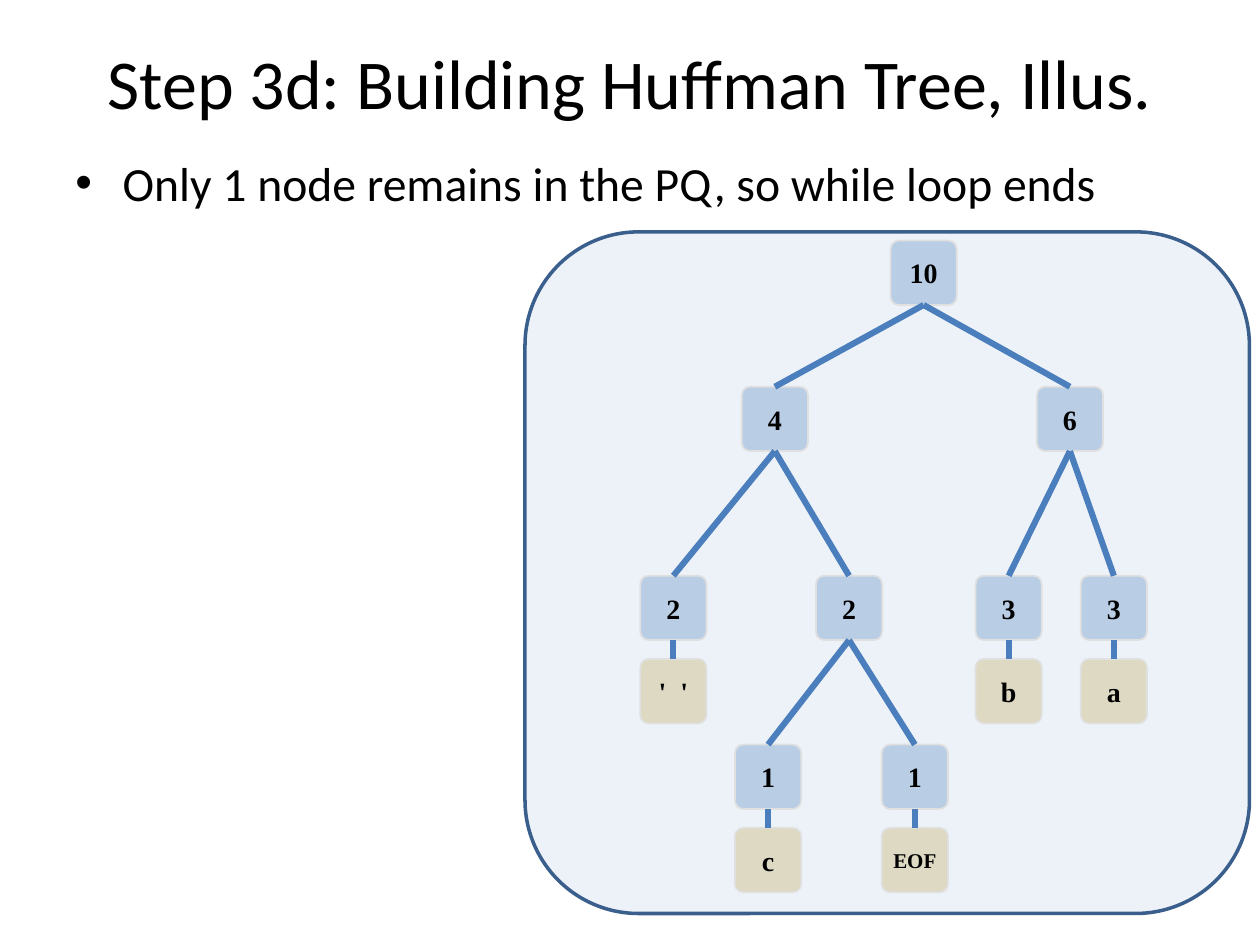
from pptx import Presentation
from pptx.dml.color import RGBColor
from pptx.enum.shapes import MSO_CONNECTOR as Link, MSO_SHAPE as Shape
from pptx.enum.text import MSO_ANCHOR as Anchor, MSO_AUTO_SIZE as Auto, PP_ALIGN as Align
from pptx.oxml.ns import qn
from pptx.util import Pt
from lxml.etree import SubElement as Sub


def tint(col, code):
    col.rgb = RGBColor.from_string(code)


def style(frame, text, font, look, code, align):
    for key, val in look.items():
        setattr(frame, key, val)
    para = frame.paragraphs[0]
    para.alignment = align
    run = para.add_run()
    run.text = text
    for key, val in font.items():
        setattr(run.font, key, val)
    tint(run.font.color, code)
    return para


deck = Presentation()
deck.slide_width, deck.slide_height = Pt(720), Pt(540)
slide = deck.slides.add_slide(deck.slide_layouts[5])
shapes = slide.shapes

panel = shapes.add_shape(Shape.ROUNDED_RECTANGLE, Pt(300), Pt(132.5), Pt(414), Pt(389.5))
panel.shadow.inherit = False
panel.fill.solid()
tint(panel.fill.fore_color, "4F81BD")
color = panel.fill._xPr.find(qn("a:solidFill"))[0]
Sub(color, qn("a:alpha")).set("val", "10000")
tint(panel.line.color, "3A5F8C")
panel.line.width = Pt(2)

title = shapes.title
place = {"left": Pt(36), "top": Pt(21.6), "width": Pt(648), "height": Pt(50.4)}
for key, val in place.items():
    setattr(title, key, val)
style(title.text_frame, "Step 3d: Building Huffman Tree, Illus.",
      {"name": "Calibri", "size": Pt(40)},
      {"word_wrap": True, "auto_size": Auto.NONE, "vertical_anchor": Anchor.MIDDLE},
      "000000", Align.CENTER)

body = shapes.add_textbox(Pt(36), Pt(84.24), Pt(648), Pt(36))
para = style(body.text_frame, "Only 1 node remains in the PQ, so while loop ends",
             {"name": "Calibri", "size": Pt(27.2)},
             {"word_wrap": True, "auto_size": Auto.NONE}, "000000", Align.LEFT)
props = para._p.get_or_add_pPr()
props.set("marL", str(Pt(27)))
props.set("indent", str(Pt(-27)))
Sub(props, qn("a:buFont")).set("typeface", "Arial")
Sub(props, qn("a:buChar")).set("char", "•")

wide, high, drop = 37.8, 36.8, 47.6
rows = [137.5, 221, 329, 425.5]
tree = {
    "root": ("10", 527.8, 0, "left right"),
    "left": ("4", 442.8, 1, "space pair"),
    "right": ("6", 611.4, 1, "b a"),
    "space": ("2", 384.8, 2, ""),
    "pair": ("2", 485.2, 2, "c eof"),
    "b": ("3", 576.4, 2, ""),
    "a": ("3", 636.5, 2, ""),
    "c": ("1", 438.9, 3, ""),
    "eof": ("1", 522.8, 3, ""),
}
signs = {"space": "'  '", "b": "b", "a": "a", "c": "c", "eof": "EOF"}

cells = [(name, text, mid, rows[row], "B9CDE5") for name, (text, mid, row, kids) in tree.items()]
cells += [(name + " leaf", text, tree[name][1], rows[tree[name][2]] + drop, "DDD9C3")
          for name, text in signs.items()]
look = {"word_wrap": False, "vertical_anchor": Anchor.MIDDLE}
nodes = {}
for name, text, mid, top, code in cells:
    node = shapes.add_shape(Shape.ROUNDED_RECTANGLE, Pt(mid - wide / 2), Pt(top), Pt(wide), Pt(high))
    node.shadow.inherit = False
    node.adjustments[0] = 0.126
    node.fill.solid()
    tint(node.fill.fore_color, code)
    tint(node.line.color, "E0E0E0")
    node.line.width = Pt(1)
    font = {"name": "Times New Roman", "size": Pt(12 if text == "EOF" else 16), "bold": True}
    style(node.text_frame, text, font, look, "000000", Align.CENTER)
    nodes[name] = node

edges = [(name, kid) for name, item in tree.items() for kid in item[3].split()]
edges += [(name, name + " leaf") for name in signs]
for start, end in edges:
    edge = shapes.add_connector(Link.STRAIGHT, 0, 0, 0, 0)
    edge.begin_connect(nodes[start], 2)
    edge.end_connect(nodes[end], 0)
    tint(edge.line.color, "4B7EBC")
    edge.line.width = Pt(3.5)
    Sub(edge._element.spPr, qn("a:effectLst"))

deck.save("out.pptx")
